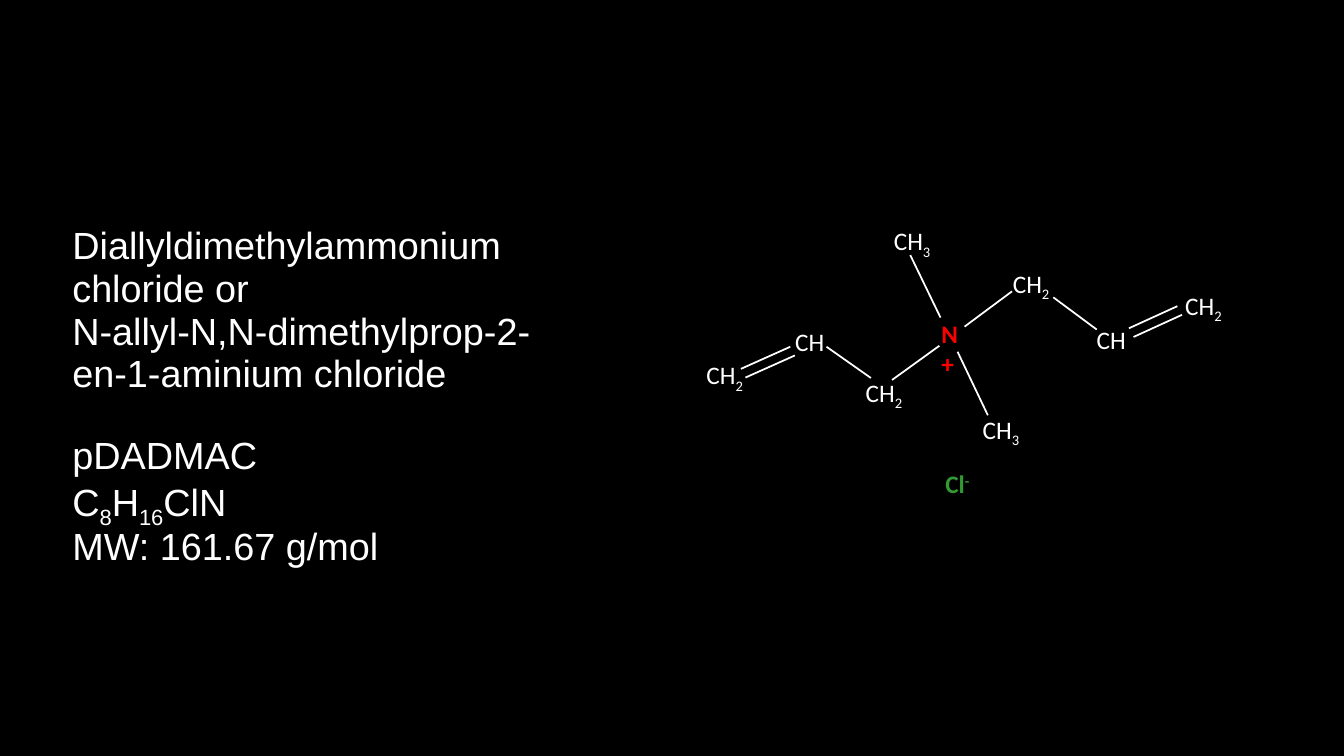
from dataclasses import dataclass

from pptx import Presentation
from pptx.dml.color import RGBColor
from pptx.enum.shapes import MSO_CONNECTOR as Connector
from pptx.enum.text import MSO_ANCHOR as Anchor
from pptx.oxml.ns import qn
from pptx.util import Pt
from lxml import etree


@dataclass(frozen=True)
class Theme:
    background: str = "000000"
    ink: str = "FFFFFF"
    cation: str = "FF0000"
    anion: str = "339933"
    title_font: str = "Arial"
    atom_font: str = "Calibri"
    title_size: float = 27
    atom_size: float = 18
    bond_width: float = 1.25


theme = Theme()

# Content: a line is a list of (text, baseline shift in percent)
SUB, SUPER = -25, 30
NAME_LINES = [
    [("Diallyldimethylammonium chloride or", 0)],
    [("N-allyl-N,N-dimethylprop-2-en-1-aminium chloride", 0)],
    [("pDADMAC", 0)],
    [("C", 0), ("8", SUB), ("H", 0), ("16", SUB), ("ClN", 0)],
    [("MW: 161.67 g/mol", 0)],
]
GAP_BEFORE = 2  # the line that opens the second block

CH = [[("CH", 0)]]
CH2 = [[("CH", 0), ("2", SUB)]]
CH3 = [[("CH", 0), ("3", SUB)]]
NITROGEN = [[("N", 0)], [("+", 0)]]
CHLORIDE = [[("Cl", 0), ("-", SUPER)]]

# Atom groups: lines, left, top, width, height
ATOMS = [
    (CH3, 631.4, 157.7, 41.8, 29),
    (CH3, 694.8, 292.3, 41.8, 29),
    (CH2, 611.3, 265.7, 41.8, 29),
    (CH, 560.9, 229.7, 35.3, 29),
    (CH2, 497.5, 253.4, 41.8, 29),
    (CH2, 716.4, 187.9, 41.8, 29),
    (CH, 776.2, 228.2, 35.3, 29),
    (CH2, 839.5, 203.8, 41.8, 29),
]
IONS = [
    (NITROGEN, 665.3, 223.9, 26, 51, theme.cation),
    (CHLORIDE, 668.2, 331.2, 32.4, 29, theme.anion),
]

# Bonds: start x, start y, end x, end y
SINGLE_BONDS = [
    (705.6, 296.6, 684, 251.3),
    (671.8, 226.8, 650.2, 182.2),
    (671, 247, 637.2, 271.4),
    (622.1, 270, 590.4, 247.7),
    (722.9, 208.1, 689, 233.3),
    (783.4, 235.4, 752.4, 212.4),
]
DOUBLE_BONDS = [
    (564.5, 247.7, 529.2, 263.5),
    (841, 218.7, 806.4, 234.5),
]
DOUBLE_SHIFT = (3.3, 6.2)


def write_lines(page, lines, left, top, width, height, font, size, color,
                bold=False, wrap=False):
    box = page.shapes.add_textbox(Pt(left), Pt(top), Pt(width), Pt(height))
    frame = box.text_frame
    frame.word_wrap = wrap
    frame.vertical_anchor = Anchor.TOP
    for index, line in enumerate(lines):
        para = frame.paragraphs[0] if index == 0 else frame.add_paragraph()
        para.font.name = font
        para.font.size = Pt(size)
        para.font.bold = bold
        para.font.color.rgb = RGBColor.from_string(color)
        for text, baseline in line:
            span = para.add_run()
            span.text = text
            if baseline:
                span.font._element.set("baseline", str(baseline * 1000))
    return frame


def draw_bond(page, x1, y1, x2, y2):
    bond = page.shapes.add_connector(
        Connector.STRAIGHT, Pt(x1), Pt(y1), Pt(x2), Pt(y2))
    bond.line.color.rgb = RGBColor.from_string(theme.ink)
    bond.line.width = Pt(theme.bond_width)
    etree.SubElement(bond._element.spPr, qn("a:effectLst"))


def main():
    deck = Presentation()
    deck.slide_width, deck.slide_height = Pt(960), Pt(540)
    page = deck.slides.add_slide(deck.slide_layouts[6])
    page.background.fill.solid()
    page.background.fill.fore_color.rgb = RGBColor.from_string(theme.background)

    # Compound name, formula and weight
    frame = write_lines(page, NAME_LINES, 44.6, 157.7, 360.7, 276.5,
                        theme.title_font, theme.title_size, theme.ink, wrap=True)
    for para in frame.paragraphs:
        para.line_spacing = 0.94
    frame.paragraphs[GAP_BEFORE].space_before = Pt(28)

    # Bonds
    dx, dy = DOUBLE_SHIFT
    parallels = [(x1 + dx, y1 + dy, x2 + dx, y2 + dy)
                 for x1, y1, x2, y2 in DOUBLE_BONDS]
    for ends in SINGLE_BONDS + DOUBLE_BONDS + parallels:
        draw_bond(page, *ends)

    # Atom groups and ions
    for lines, *place in ATOMS:
        write_lines(page, lines, *place, theme.atom_font, theme.atom_size, theme.ink)
    for lines, *place, color in IONS:
        write_lines(page, lines, *place, theme.atom_font, theme.atom_size, color,
                    bold=True)

    deck.save("out.pptx")


if __name__ == "__main__":
    main()
